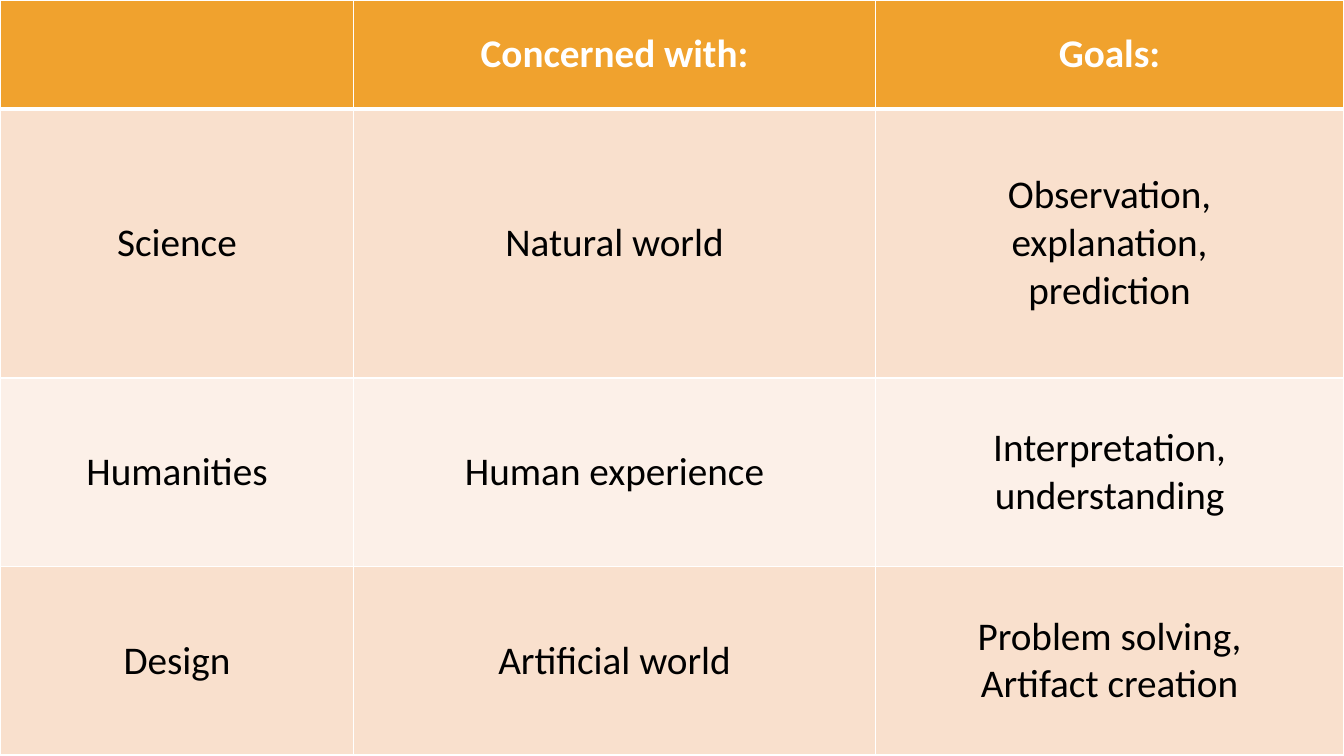
"""Build a slide with a full-bleed table comparing science, humanities and design."""
from dataclasses import dataclass

from lxml.etree import SubElement
from pptx import Presentation
from pptx.dml.color import RGBColor as RGB
from pptx.enum.text import MSO_ANCHOR as ANCHOR, PP_ALIGN as ALIGN
from pptx.oxml.ns import qn
from pptx.util import Inches, Pt

ROWS = [
    ("", "Concerned with:", "Goals:"),
    ("Science", "Natural world", "Observation,\nexplanation,\nprediction"),
    ("Humanities", "Human experience", "Interpretation, understanding"),
    ("Design", "Artificial world", "Problem solving,\nArtifact creation"),
]
COLUMN_WIDTHS = (3.51, 5.17, 4.65)
ROW_HEIGHTS = (1.08, 2.67, 1.87, 1.87)


@dataclass(frozen=True)
class Theme:
    font: str = "Calibri"
    size: int = 28
    header: str = "F0A22E"
    bands: tuple = ("FCF0E8", "F9E0CD")
    header_text: str = "FFFFFF"
    body_text: str = "000000"
    border: str = "FFFFFF"
    thin: int = 1
    thick: int = 3


THEME = Theme()


def add_borders(cell, row):
    tc_pr = cell._tc.get_or_add_tcPr()
    thick_side = {0: "B", 1: "T"}.get(row)
    for side in "LRTB":
        width = THEME.thick if side == thick_side else THEME.thin
        ln = SubElement(tc_pr, qn(f"a:ln{side}"), w=str(Pt(width)))
        fill = SubElement(ln, qn("a:solidFill"))
        SubElement(fill, qn("a:srgbClr"), val=THEME.border)


def format_cell(cell, text, row):
    is_header = row == 0
    add_borders(cell, row)
    cell.fill.solid()
    fill = THEME.header if is_header else THEME.bands[row % 2]
    cell.fill.fore_color.rgb = RGB.from_string(fill)
    cell.vertical_anchor = ANCHOR.MIDDLE
    cell.text = text
    color = THEME.header_text if is_header else THEME.body_text
    for p in cell.text_frame.paragraphs:
        p.alignment = ALIGN.CENTER
        p.font.name = THEME.font
        p.font.size = Pt(THEME.size)
        p.font.bold = is_header
        p.font.color.rgb = RGB.from_string(color)


def main():
    prs = Presentation()
    prs.slide_width, prs.slide_height = Inches(13.33), Inches(7.5)
    s = prs.slides.add_slide(prs.slide_layouts[6])
    table = s.shapes.add_table(len(ROWS), len(COLUMN_WIDTHS), 0, 0,
                               prs.slide_width, prs.slide_height).table
    for column, width in zip(table.columns, COLUMN_WIDTHS):
        column.width = Inches(width)
    for i, (height, texts) in enumerate(zip(ROW_HEIGHTS, ROWS)):
        table.rows[i].height = Inches(height)
        for j, text in enumerate(texts):
            format_cell(table.cell(i, j), text, i)
    prs.save("out.pptx")


if __name__ == "__main__":
    main()
